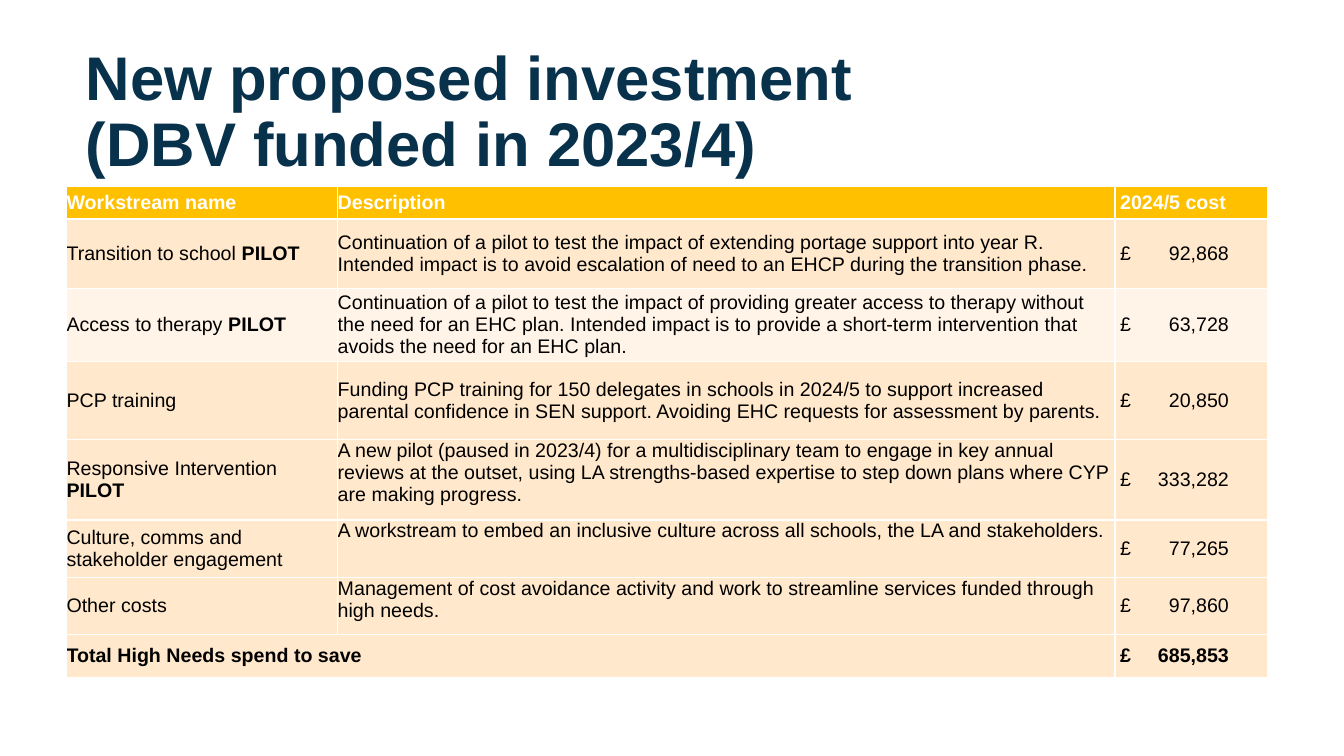
from dataclasses import dataclass

from lxml.etree import SubElement
from pptx import Presentation
from pptx.dml.color import RGBColor
from pptx.enum.text import MSO_ANCHOR as Anchor, MSO_AUTO_SIZE as AutoSize, PP_ALIGN as Align
from pptx.oxml import parse_xml
from pptx.oxml.ns import nsdecls, qn
from pptx.util import Inches, Pt


@dataclass(frozen=True)
class Theme:
    font: str = "Arial"
    title_size: int = 44
    table_size: int = 14
    title: str = "08314C"
    text: str = "000000"
    white: str = "FFFFFF"
    header: str = "FFC000"
    band: str = "FFE8CB"
    light_band: str = "FFF4E7"
    rule: float = 1
    header_rule: float = 1.5


@dataclass(frozen=True)
class Workstream:
    name: str
    description: str
    cost: str
    height: float
    tag: str = ""
    fill: str = Theme.band
    anchor: Anchor = Anchor.MIDDLE


THEME = Theme()
COLUMN_WIDTHS = (2.69, 7.71, 1.51)
HEADINGS = ("Workstream name", "Description", "2024/5 cost")
HEADER_HEIGHT, TOTAL_HEIGHT = 0.32, 0.42
COST_INSET, COST_TAB = 0.05, 1.08

WORKSTREAMS = [
    Workstream("Transition to school ",
               "Continuation of a pilot to test the impact of extending portage support into year R. "
               "Intended impact is to avoid escalation of need to an EHCP during the transition phase.",
               "92,868", 0.69, tag="PILOT"),
    Workstream("Access to therapy ",
               "Continuation of a pilot to test the impact of providing greater access to therapy "
               "without the need for an EHC plan. Intended impact is to provide a short-term "
               "intervention that avoids the need for an EHC plan.",
               "63,728", 0.73, tag="PILOT", fill=THEME.light_band),
    Workstream("PCP training",
               "Funding PCP training for 150 delegates in schools in 2024/5 to support increased "
               "parental confidence in SEN support. Avoiding EHC requests for assessment by parents.",
               "20,850", 0.77),
    Workstream("Responsive Intervention ",
               "A new pilot (paused in 2023/4) for a multidisciplinary team to engage in key annual "
               "reviews at the outset, using LA strengths-based expertise to step down plans where "
               "CYP are making progress.",
               "333,282", 0.8, tag="PILOT", anchor=Anchor.TOP),
    Workstream("Culture, comms and stakeholder engagement",
               "A workstream to embed an inclusive culture across all schools, the LA and stakeholders.",
               "77,265", 0.57, anchor=Anchor.TOP),
    Workstream("Other costs",
               "Management of cost avoidance activity and work to streamline services funded through "
               "high needs.",
               "97,860", 0.57, anchor=Anchor.TOP),
]


def add_text(p, text: str, *, size: float = THEME.table_size,
             color: str = THEME.text, bold: bool = False) -> None:
    r = p.add_run()
    r.text = text
    r.font.name = THEME.font
    r.font.size = Pt(size)
    r.font.bold = bold
    r.font.color.rgb = RGBColor.from_string(color)


def set_borders(cell, top: float, bottom: float) -> None:
    tcPr = cell._tc.get_or_add_tcPr()
    widths = {"lnL": THEME.rule, "lnR": THEME.rule, "lnT": top, "lnB": bottom}
    for i, (side, width) in enumerate(widths.items()):
        tcPr.insert(i, parse_xml(
            f'<a:{side} {nsdecls("a")} w="{Pt(width)}"><a:solidFill>'
            f'<a:srgbClr val="{THEME.white}"/></a:solidFill></a:{side}>'))


def format_cell(cell, fill: str, *, anchor: Anchor = Anchor.MIDDLE, left: float = 0,
                top: float = THEME.rule, bottom: float = THEME.rule):
    """Style a cell and return its first paragraph."""
    cell.fill.solid()
    cell.fill.fore_color.rgb = RGBColor.from_string(fill)
    cell.vertical_anchor = anchor
    cell.margin_left = Inches(left)
    cell.margin_right = cell.margin_top = cell.margin_bottom = 0
    set_borders(cell, top, bottom)
    return cell.text_frame.paragraphs[0]


def add_cost(cell, cost: str, fill: str, *, bold: bool = False, top: float = THEME.rule) -> None:
    """Pound sign at the left, amount lined up on a right tab."""
    p = format_cell(cell, fill, left=COST_INSET, top=top)
    tabs = SubElement(p._p.get_or_add_pPr(), qn("a:tabLst"))
    SubElement(tabs, qn("a:tab"), pos=str(Inches(COST_TAB)), algn="r")
    add_text(p, f"£\t{cost}", bold=bold)


def add_title(s, text: str) -> None:
    sp = s.shapes.title
    sp.left, sp.top, sp.width, sp.height = map(Inches, (0.75, 0.4, 11.67, 1.45))
    tf = sp.text_frame
    tf.auto_size = AutoSize.NONE
    tf.word_wrap = True
    tf.vertical_anchor = Anchor.MIDDLE
    p = tf.paragraphs[0]
    p.alignment = Align.LEFT
    p.line_spacing = 0.9
    for i, line in enumerate(text.split("\n")):
        if i:
            p.add_line_break()
        add_text(p, line, size=THEME.title_size, color=THEME.title, bold=True)


def add_cost_table(s) -> None:
    heights = [HEADER_HEIGHT, *(w.height for w in WORKSTREAMS), TOTAL_HEIGHT]
    table = s.shapes.add_table(len(heights), len(COLUMN_WIDTHS), Inches(0.66), Inches(1.85),
                               Inches(sum(COLUMN_WIDTHS)), Inches(sum(heights))).table
    table.horz_banding = False
    for column, width in zip(table.columns, COLUMN_WIDTHS):
        column.width = Inches(width)
    for row, height in zip(table.rows, heights):
        row.height = Inches(height)

    # Header row
    for i, heading in enumerate(HEADINGS):
        left = COST_INSET if i == len(HEADINGS) - 1 else 0
        p = format_cell(table.cell(0, i), THEME.header, left=left, bottom=THEME.header_rule)
        add_text(p, heading, color=THEME.white, bold=True)

    # Workstream rows
    for i, w in enumerate(WORKSTREAMS, start=1):
        top = THEME.header_rule if i == 1 else THEME.rule
        p = format_cell(table.cell(i, 0), w.fill, top=top)
        add_text(p, w.name)
        if w.tag:
            add_text(p, w.tag, bold=True)
        add_text(format_cell(table.cell(i, 1), w.fill, anchor=w.anchor, top=top), w.description)
        add_cost(table.cell(i, 2), w.cost, w.fill, top=top)

    # Total row
    last = len(heights) - 1
    table.cell(last, 0).merge(table.cell(last, 1))
    p = format_cell(table.cell(last, 0), THEME.band)
    add_text(p, "Total High Needs spend to save", bold=True)
    add_cost(table.cell(last, 2), "685,853", THEME.band, bold=True)


def main() -> None:
    prs = Presentation()
    prs.slide_width, prs.slide_height = Inches(13.33), Inches(7.5)
    s = prs.slides.add_slide(prs.slide_layouts[5])
    add_title(s, "New proposed investment\n(DBV funded in 2023/4)")
    add_cost_table(s)
    prs.save("out.pptx")


if __name__ == "__main__":
    main()
